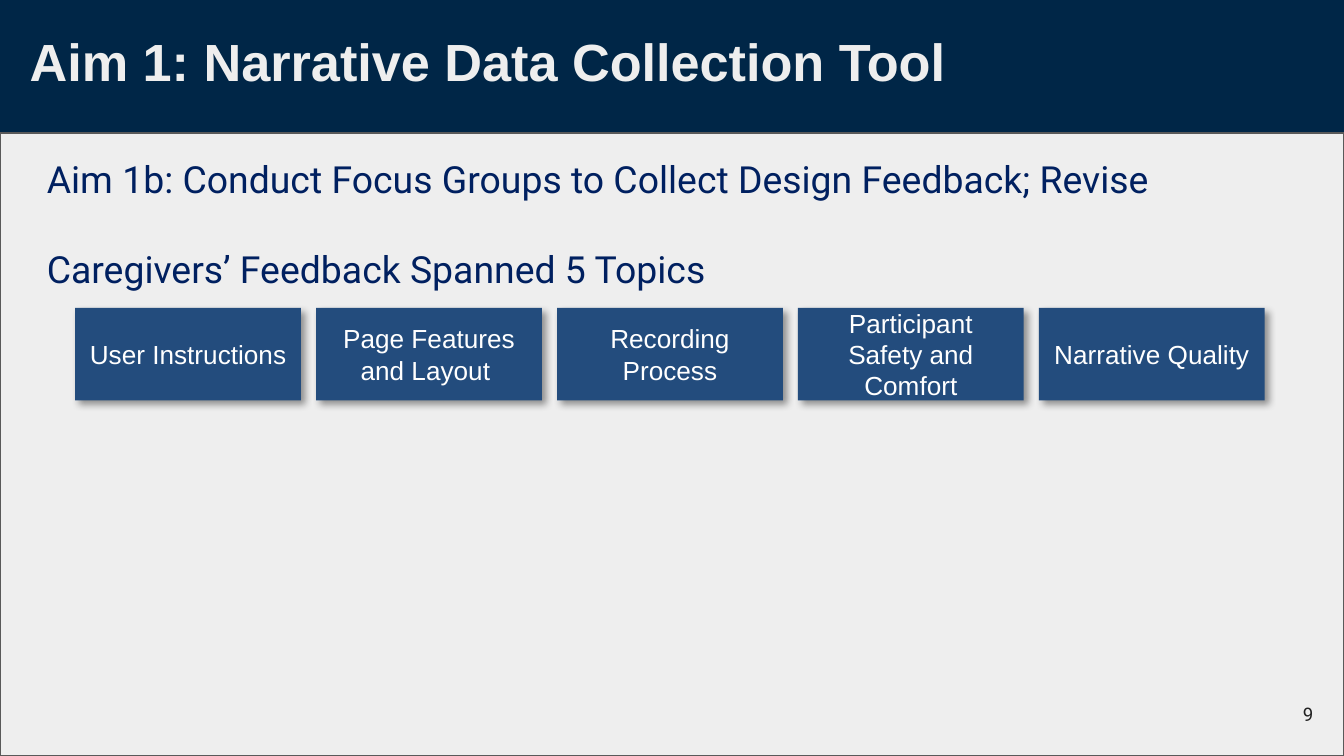
from dataclasses import dataclass

from lxml.etree import SubElement
from pptx import Presentation
from pptx.dml.color import RGBColor as Rgb
from pptx.enum.shapes import MSO_SHAPE as Kind
from pptx.enum.text import MSO_ANCHOR as Anchor, MSO_AUTO_SIZE as Fit, PP_ALIGN as Align
from pptx.oxml.ns import qn
from pptx.util import Inches, Pt


@dataclass(frozen=True)
class Theme:
    navy: str = "002647"
    paper: str = "EEEEEE"
    edge: str = "595959"
    ink: str = "002060"
    dark: str = "212121"
    card: str = "234C7D"
    white: str = "FFFFFF"
    head: int = 28
    lead: int = 20
    label: int = 14
    page: int = 10
    sans: str = "Arial"
    body: str = "Roboto"


@dataclass(frozen=True)
class Box:
    left: float
    top: float
    width: float
    height: float

    def emu(self) -> tuple:
        return tuple(map(Inches, (self.left, self.top, self.width, self.height)))


@dataclass(frozen=True)
class Row:
    """Equal cells spread evenly from the first cell to the left edge of the last."""
    first: Box
    last: float
    count: int

    def cell(self, col: int) -> Box:
        one = self.first
        step = (self.last - one.left) / (self.count - 1)
        return Box(one.left + col * step, one.top, one.width, one.height)


THEME = Theme()
WIDE = 10
HIGH = WIDE * 9 / 16
BAND = 0.99
TOPICS = ("User Instructions", "Page Features and Layout ", "Recording Process",
          "Participant Safety and Comfort", "Narrative Quality")
CARDS = Row(Box(0.56, 2.29, 1.68, 0.69), 7.73, len(TOPICS))


def write(shape, *lines: str, size: int, color: str, font: str, bold: bool = False,
          align=Align.LEFT, anchor=Anchor.MIDDLE, gap: float = 0,
          inset: float = 0.05) -> None:
    """Fill a shape with one paragraph per line; gap is the space between them."""
    frame = shape.text_frame
    frame.word_wrap, frame.auto_size = True, Fit.NONE
    frame.vertical_anchor = anchor
    frame.margin_left = frame.margin_right = Inches(0.1)
    frame.margin_top = frame.margin_bottom = Inches(inset)
    for i, line in enumerate(lines):
        para = frame.add_paragraph() if i else frame.paragraphs[0]
        para.alignment = align
        if i:
            para.space_before = Pt(gap)
        run = para.add_run()
        run.text = line
        run.font.size, run.font.name, run.font.bold = Pt(size), font, bold
        run.font.color.rgb = Rgb.from_string(color)


def panel(slide, box: Box, fill: str, edge: str = ""):
    shape = slide.shapes.add_shape(Kind.RECTANGLE, *box.emu())
    shape.shadow.inherit = False
    shape.fill.solid()
    shape.fill.fore_color.rgb = Rgb.from_string(fill)
    if edge:
        shape.line.color.rgb = Rgb.from_string(edge)
        shape.line.width = Pt(0.75)
    else:
        shape.line.fill.background()
    return shape


def shade(shape) -> None:
    """Give a shape a soft black shadow to its lower right."""
    effects = shape.element.spPr.find(qn("a:effectLst"))
    outer = SubElement(effects, qn("a:outerShdw"), blurRad=str(Pt(4)), dist=str(Pt(3)),
                       dir=str(45 * 60000), algn="tl", rotWithShape="0")
    color = SubElement(outer, qn("a:srgbClr"), val="000000")
    SubElement(color, qn("a:alpha"), val="40000")


def main() -> None:
    deck = Presentation()
    deck.slide_width, deck.slide_height = Inches(WIDE), Inches(HIGH)
    slide = deck.slides.add_slide(deck.slide_layouts[5])
    back = slide.background.fill
    back.solid()
    back.fore_color.rgb = Rgb.from_string(THEME.navy)

    title = slide.shapes.title
    title.left, title.top, title.width, title.height = Box(0.12, 0.12, 9.73, 0.71).emu()
    write(title, "Aim 1: Narrative Data Collection Tool", size=THEME.head,
          color=THEME.paper, font=THEME.sans, bold=True, anchor=Anchor.TOP, inset=0.1)

    panel(slide, Box(0, BAND, WIDE, HIGH - BAND), THEME.paper, THEME.edge)
    page = slide.shapes.add_textbox(*Box(9.27, 5.1, 0.6, 0.43).emu())
    write(page, "9", size=THEME.page, color=THEME.dark, font=THEME.body,
          align=Align.RIGHT, inset=0.1)

    lead = slide.shapes.add_textbox(*Box(0.25, 1.03, 9, 1.27).emu())
    write(lead, "Aim 1b: Conduct Focus Groups to Collect Design Feedback; Revise",
          "Caregivers’ Feedback Spanned 5 Topics", size=THEME.lead,
          color=THEME.ink, font=THEME.body, gap=24)

    for col, topic in enumerate(TOPICS):
        card = panel(slide, CARDS.cell(col), THEME.card)
        shade(card)
        write(card, topic, size=THEME.label, color=THEME.white, font=THEME.sans,
              align=Align.CENTER)

    deck.save("out.pptx")


if __name__ == "__main__":
    main()
